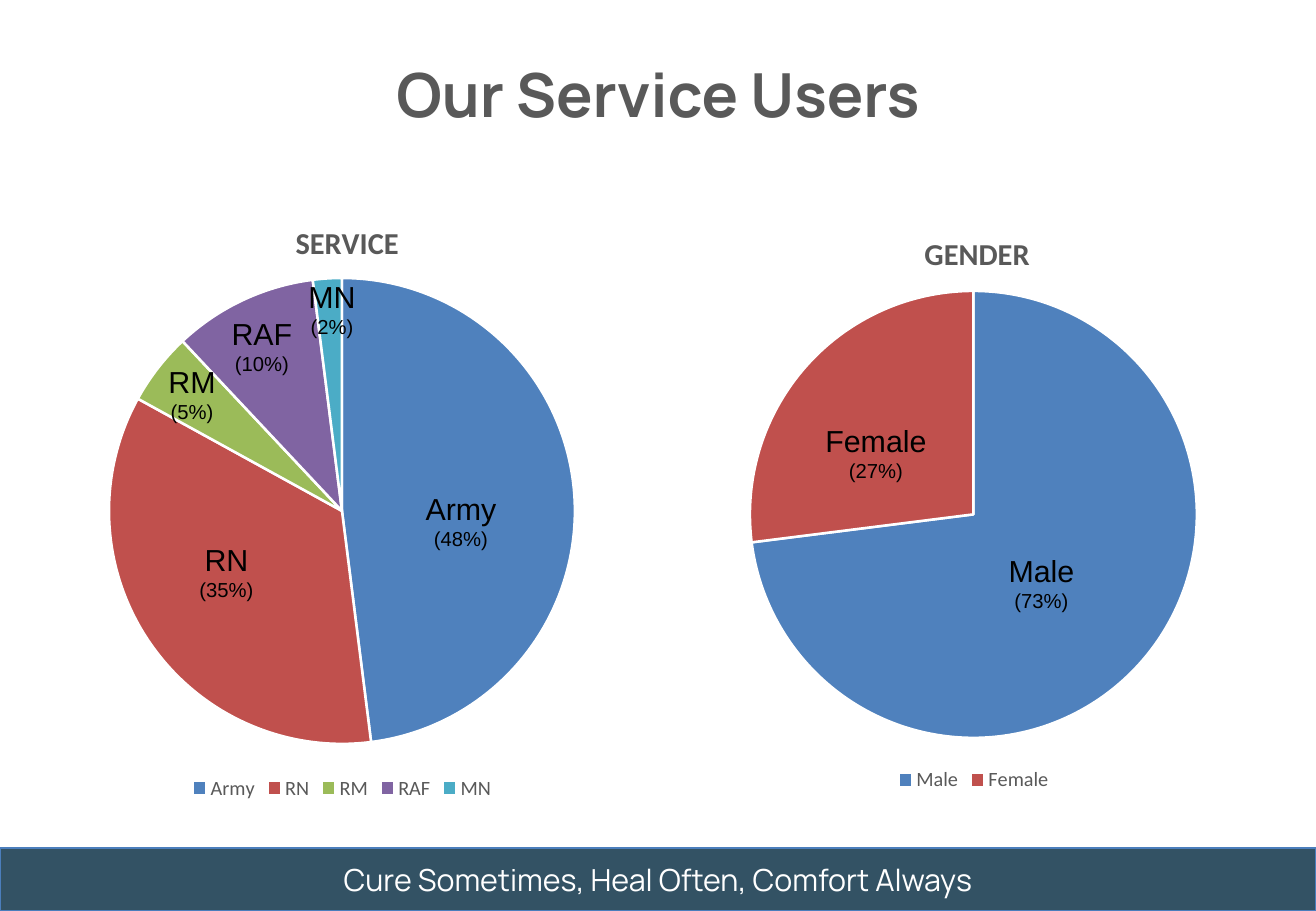
from pptx import Presentation
from pptx.chart import data as chart_data
from pptx.dml.color import RGBColor
from pptx.enum import chart as charts, shapes, text
from pptx.oxml import parse_xml
from pptx.oxml.ns import nsdecls
from pptx.util import Pt

EMU_PER_PX = 7526
SLIDE_W, SLIDE_H = 1316, 911
GREY, WHITE, BLACK = "595959", "FFFFFF", "000000"
SLICE_COLOURS = ["4F81BD", "C0504D", "9BBB59", "8064A2", "4BACC6"]
LABEL_H = 74

# Each slice: name, percentage, and left, top and width of its label
SERVICE = [
    ("Army", 48, (413, 484, 96)),
    ("RN", 35, (187, 535, 79)),
    ("RM", 5, (156, 357, 72)),
    ("RAF", 10, (219, 309, 86)),
    ("MN", 2, (296, 272, 72)),
]
GENDER = [
    ("Male", 73, (996, 546, 91)),
    ("Female", 27, (813, 416, 126)),
]


def px(*lengths):
    return [round(length * EMU_PER_PX) for length in lengths]


def colour(hex_string):
    return RGBColor.from_string(hex_string)


def style_font(font, name, size, hex_string, bold=False):
    font.name, font.size, font.bold = name, Pt(size), bold
    font.color.rgb = colour(hex_string)


def style_paragraph(paragraph, name, size, hex_string, bold=False):
    paragraph.alignment = text.PP_ALIGN.CENTER
    for run in paragraph.runs:
        style_font(run.font, name, size, hex_string, bold)


def manual_layout(frame, target, inner=False):
    """Layout element placing a slide-based box (x, y[, w, h]) inside the chart frame."""
    left, top, width, height = frame
    fractions = {"x": (target[0] - left) / width, "y": (target[1] - top) / height}
    if len(target) == 4:
        fractions.update(w=target[2] / width, h=target[3] / height)
    parts = '<c:layoutTarget val="inner"/>' if inner else ""
    parts += '<c:xMode val="edge"/><c:yMode val="edge"/>'
    parts += "".join(f'<c:{key} val="{value:.4f}"/>' for key, value in fractions.items())
    return parse_xml(f'<c:layout {nsdecls("c")}><c:manualLayout>{parts}'
                     '</c:manualLayout></c:layout>')


def add_heading(slide, box, wording):
    heading = slide.shapes.title
    heading.left, heading.top, heading.width, heading.height = px(*box)
    frame = heading.text_frame
    frame.text = wording
    frame.vertical_anchor = text.MSO_ANCHOR.MIDDLE
    style_paragraph(frame.paragraphs[0], "Manrope", 36, GREY, bold=True)


def add_motto(slide, box, wording):
    banner = slide.shapes.add_shape(shapes.MSO_SHAPE.RECTANGLE, *px(*box))
    banner.shadow.inherit = False
    banner.fill.solid()
    banner.fill.fore_color.rgb = colour("335264")
    banner.line.color.rgb = colour("4B7EBC")
    banner.line.width = Pt(0.75)
    banner.text_frame.text = wording
    banner.text_frame.vertical_anchor = text.MSO_ANCHOR.MIDDLE
    style_paragraph(banner.text_frame.paragraphs[0], "Manrope", 18, WHITE)


def add_pie(slide, frame, title, title_at, pie_box, slices):
    data = chart_data.CategoryChartData()
    data.categories = [name for name, _, _ in slices]
    data.add_series("Series 1", [share for _, share, _ in slices])
    chart = slide.shapes.add_chart(charts.XL_CHART_TYPE.PIE, *px(*frame), data).chart
    style_font(chart.font, "Calibri", 10, BLACK)

    chart.has_title = True
    chart.chart_title.text_frame.text = title
    style_paragraph(chart.chart_title.text_frame.paragraphs[0], "Calibri", 18, GREY, bold=True)
    chart.chart_title.include_in_layout = False

    chart.has_legend = True
    chart.legend.position = charts.XL_LEGEND_POSITION.BOTTOM
    chart.legend.include_in_layout = False
    style_font(chart.legend.font, "Calibri", 12, GREY)

    plot = chart.plots[0]
    plot.vary_by_categories = True
    for index, hex_string in enumerate(SLICE_COLOURS[:len(slices)]):
        look = plot.series[0].points[index].format
        look.fill.solid()
        look.fill.fore_color.rgb = colour(hex_string)
        look.line.color.rgb = colour(WHITE)
        look.line.width = Pt(1.5)

    root = chart.element
    for old in root.xpath("c:chart/c:title/c:layout | c:chart/c:plotArea/c:layout"):
        old.getparent().remove(old)
    root.xpath("c:chart/c:title/c:tx")[0].addnext(manual_layout(frame, title_at))
    root.xpath("c:chart/c:plotArea")[0].insert(0, manual_layout(frame, pie_box, inner=True))
    root.xpath("c:chart")[0].addnext(parse_xml(
        f'<c:spPr {nsdecls("c", "a")}><a:noFill/><a:ln><a:noFill/></a:ln></c:spPr>'))


def add_slice_label(slide, name, share, place):
    left, top, width = place
    frame = slide.shapes.add_textbox(*px(left, top, width, LABEL_H)).text_frame
    frame.word_wrap = False
    frame.auto_size = text.MSO_AUTO_SIZE.SHAPE_TO_FIT_TEXT
    frame.text = f"{name}\n({share}%)"
    for paragraph, size in zip(frame.paragraphs, (18, 12)):
        style_paragraph(paragraph, "Arial", size, BLACK)


def main():
    deck = Presentation()
    deck.slide_width, deck.slide_height = px(SLIDE_W, SLIDE_H)
    slide = deck.slides.add_slide(deck.slide_layouts[5])
    add_motto(slide, (0, 848, SLIDE_W, 63), "Cure Sometimes, Heal Often, Comfort Always")
    add_heading(slide, (299, 36, 718, 115), "Our Service Users")
    add_pie(slide, (-250, 188, 1185, 617), "SERVICE", (290, 216), (109, 278, 466, 466), SERVICE)
    add_pie(slide, (524, 197, 900, 600), "GENDER", (919, 227), (750, 291, 447, 447), GENDER)
    for name, share, place in SERVICE + GENDER:
        add_slice_label(slide, name, share, place)
    deck.save("out.pptx")


if __name__ == "__main__":
    main()
